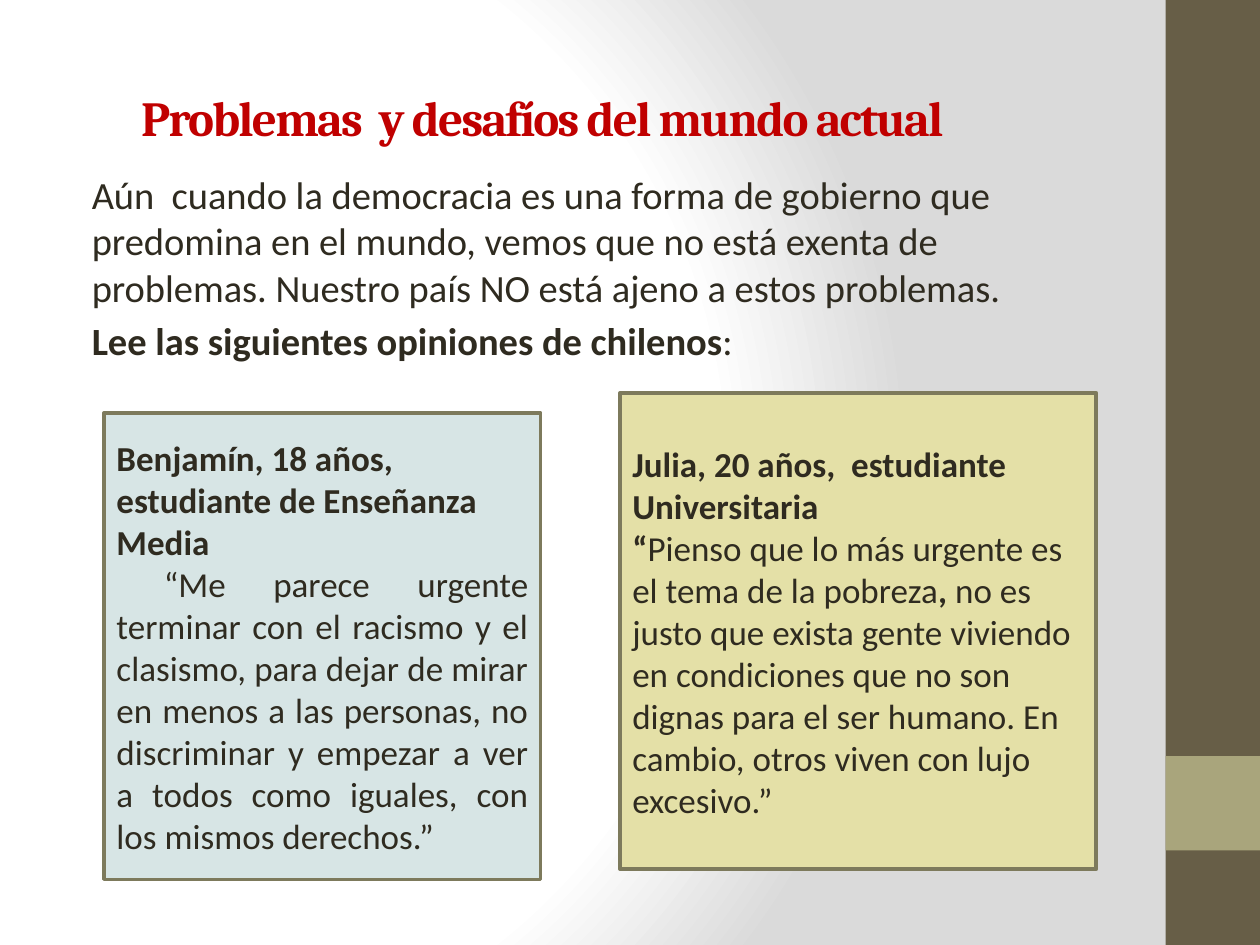
from dataclasses import dataclass

from lxml import etree
from pptx import Presentation
from pptx.dml.color import RGBColor
from pptx.enum.shapes import MSO_SHAPE
from pptx.enum.text import MSO_ANCHOR, MSO_AUTO_SIZE, PP_ALIGN
from pptx.oxml import parse_xml
from pptx.oxml.ns import nsdecls, qn
from pptx.util import Pt

RECTANGLE = MSO_SHAPE.RECTANGLE
TOP, MIDDLE = MSO_ANCHOR.TOP, MSO_ANCHOR.MIDDLE
LEFT, JUSTIFY = PP_ALIGN.LEFT, PP_ALIGN.JUSTIFY
NO_AUTOFIT = MSO_AUTO_SIZE.NONE
INK, RED, OLIVE = "2F2B20", "C00000", "7D7A5C"


@dataclass
class Span:
    text: str
    bold: bool = False


@dataclass
class Para:
    spans: list[Span]
    align: PP_ALIGN = LEFT
    margin: float = 0
    indent: float = 0
    before: float = 0


@dataclass
class Box:
    left: float
    top: float
    width: float
    height: float
    fill: str


@dataclass
class Opinion:
    box: Box
    paras: list[Para]


def color(hex_code: str) -> RGBColor:
    return RGBColor.from_string(hex_code)


def write(frame, paras: list[Para], *, size: float, font: str = "Calibri",
          ink: str = INK, anchor: MSO_ANCHOR = TOP, tracking: float = 0) -> None:
    frame.word_wrap = True
    frame.auto_size = NO_AUTOFIT
    frame.vertical_anchor = anchor
    for index, para in enumerate(paras):
        line = frame.add_paragraph() if index else frame.paragraphs[0]
        line.alignment = para.align
        line.space_before = Pt(para.before)
        properties = line._p.get_or_add_pPr()
        properties.set("marL", str(Pt(para.margin)))
        properties.set("indent", str(Pt(para.indent)))
        for span in para.spans:
            run = line.add_run()
            run.text = span.text
            run.font.name = font
            run.font.size = Pt(size)
            run.font.bold = span.bold
            run.font.color.rgb = color(ink)
            if tracking:
                run._r.get_or_add_rPr().set("spc", str(round(tracking * 100)))


def draw_box(slide, box: Box, outline: str | None = None):
    shape = slide.shapes.add_shape(RECTANGLE, Pt(box.left), Pt(box.top),
                                   Pt(box.width), Pt(box.height))
    shape.shadow.inherit = False
    shape.fill.solid()
    shape.fill.fore_color.rgb = color(box.fill)
    if outline:
        shape.line.color.rgb = color(outline)
        shape.line.width = Pt(2)
    else:
        shape.line.fill.background()
    return shape


def paint_background(slide) -> None:
    slide.background.fill.solid()
    properties = slide._element.cSld.bg.bgPr
    gradient = parse_xml(f'<a:gradFill rotWithShape="1" {nsdecls("a")}/>')
    stops = etree.SubElement(gradient, qn("a:gsLst"))
    for position, shade in ((0, "FFFFFF"), (75, "FFFFFF"), (100, "DADADA")):
        stop = etree.SubElement(stops, qn("a:gs"), pos=str(position * 1000))
        etree.SubElement(stop, qn("a:srgbClr"), val=shade)
    circle = etree.SubElement(gradient, qn("a:path"), {"path": "circle"})
    etree.SubElement(circle, qn("a:fillToRect"),
                     l="20000", t="50000", r="100000", b="50000")
    properties.replace(properties.find(qn("a:solidFill")), gradient)


SIDEBAR = [Box(666, 0, 54, 540, "675E47"), Box(666, 432, 54, 54, "A9A57C")]

INTRO = [
    Para([Span("Aún  cuando la democracia es una forma de gobierno que predomina "
               "en el mundo, vemos que no está exenta de problemas. Nuestro país "
               "NO está ajeno a estos problemas.")], margin=8.64, before=4.4),
    Para([Span("Lee las siguientes opiniones de chilenos", True), Span(":")],
         margin=8.64, before=4.4),
]

OPINIONS = [
    Opinion(Box(59.5, 236, 249.5, 266.5, "D7E5E5"), [
        Para([Span("Benjamín, 18 años, estudiante de Enseñanza Media", True)]),
        Para([Span("“Me parece urgente terminar con el racismo y el clasismo, para "
                   "dejar de mirar en menos a las personas, no discriminar y empezar "
                   "a ver a todos como iguales, con los mismos derechos.”")],
             align=JUSTIFY, indent=27),
    ]),
    Opinion(Box(354.25, 224.5, 272.25, 272.25, "E4E0A7"), [
        Para([Span("Julia, 20 años,  estudiante Universitaria", True)]),
        Para([Span("“", True),
              Span("Pienso que lo más urgente es el tema de la pobreza"),
              Span(", ", True),
              Span("no es justo que exista gente viviendo en condiciones que no son "
                   "dignas para el ser humano. En cambio, otros viven con lujo "
                   "excesivo.”")]),
    ]),
]


def main() -> None:
    deck = Presentation()
    deck.slide_width, deck.slide_height = Pt(720), Pt(540)
    slide = deck.slides.add_slide(deck.slide_layouts[5])
    paint_background(slide)
    for band in SIDEBAR:
        draw_box(slide, band)

    title = slide.shapes.title
    title.left, title.top, title.width, title.height = Pt(36), Pt(21.6), Pt(600), Pt(90)
    write(title.text_frame,
          [Para([Span("Problemas  y desafíos del mundo actual", True)], margin=37.5)],
          size=28, font="Cambria", ink=RED, anchor=MIDDLE, tracking=-1)

    intro = slide.shapes.add_textbox(Pt(36.7), Pt(94.3), Pt(599), Pt(147.6))
    write(intro.text_frame, INTRO, size=22)

    for opinion in OPINIONS:
        card = draw_box(slide, opinion.box, OLIVE)
        write(card.text_frame, opinion.paras, size=20, anchor=MIDDLE)

    deck.save("out.pptx")


if __name__ == "__main__":
    main()
